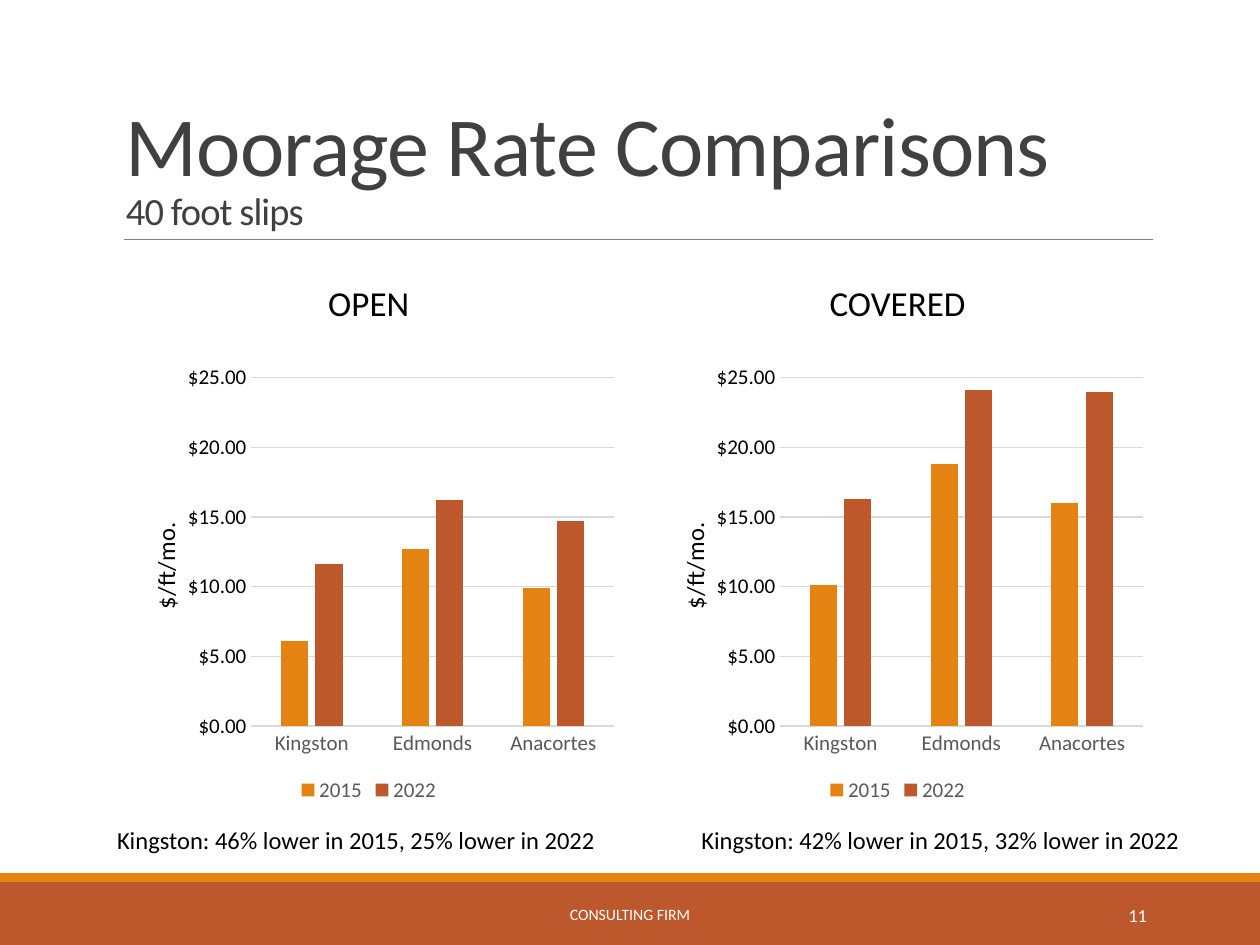
from dataclasses import dataclass

from lxml import etree
from pptx import Presentation
from pptx.chart.data import CategoryChartData
from pptx.dml.color import RGBColor
from pptx.enum import chart as ch, shapes, text
from pptx.oxml.ns import qn
from pptx.util import Cm, Pt


@dataclass(frozen=True)
class Theme:
    font: str = "Calibri"
    orange: str = "E48312"
    rust: str = "BD582C"
    title: str = "404040"
    label: str = "595959"
    rule: str = "808080"
    grid: str = "D9D9D9"
    black: str = "000000"
    white: str = "FFFFFF"
    title_size: float = 48
    subtitle_size: float = 22
    heading_size: float = 20
    note_size: float = 14
    axis_size: float = 12
    number_size: float = 10.5
    footer_size: float = 9


T = Theme()
CITIES = ["Kingston", "Edmonds", "Anacortes"]
PANELS = [
    # left, heading, rates by year, note, note left
    (2.29, "OPEN", {"2015": [6.1, 12.7, 9.9], "2022": [11.6, 16.2, 14.7]},
     "Kingston: 46% lower in 2015, 25% lower in 2022", 2.11),
    (12.95, "COVERED", {"2015": [10.1, 18.8, 16], "2022": [16.3, 24.1, 24]},
     "Kingston: 42% lower in 2015, 32% lower in 2022", 13.89),
]


def rgb(color):
    return RGBColor.from_string(color)


def style_font(font, size, color):
    font.name, font.size, font.bold = T.font, Pt(size), False
    font.color.rgb = rgb(color)


def add_text(s, box, lines, color=T.black, align=text.PP_ALIGN.LEFT,
             anchor=text.MSO_ANCHOR.MIDDLE, wrap=True, line_spacing=None, tracking=None):
    """Place (text, size) lines in one paragraph, parted by line breaks."""
    tf = s.shapes.add_textbox(*map(Cm, box)).text_frame
    tf.word_wrap, tf.vertical_anchor = wrap, anchor
    p = tf.paragraphs[0]
    p.alignment, p.line_spacing = align, line_spacing
    for i, (line, size) in enumerate(lines):
        if i:
            p.add_line_break()
        r = p.add_run()
        r.text = line
        style_font(r.font, size, color)
        if tracking is not None:
            r.font._element.set("spc", str(tracking))
    return p


def add_band(s, box, color):
    sp = s.shapes.add_shape(shapes.MSO_SHAPE.RECTANGLE, *map(Cm, box))
    sp.shadow.inherit = False
    sp.fill.solid()
    sp.fill.fore_color.rgb = rgb(color)
    sp.line.fill.background()


def set_layout(parent, index, **values):
    """Fix the place of a chart part, as fractions of the chart."""
    for old in parent.findall(qn("c:layout")):
        parent.remove(old)
    layout = etree.Element(qn("c:layout"))
    manual = etree.SubElement(layout, qn("c:manualLayout"))
    for tag, value in values.items():
        etree.SubElement(manual, qn(f"c:{tag}")).set("val", str(value))
    parent.insert(index, layout)


def style_axes(chart):
    cat, val = chart.category_axis, chart.value_axis
    for axis, color in ((cat, T.label), (val, T.black)):
        axis.major_tick_mark = axis.minor_tick_mark = ch.XL_TICK_MARK.NONE
        style_font(axis.tick_labels.font, T.axis_size, color)
    val.format.line.fill.background()
    val.minimum_scale, val.maximum_scale, val.major_unit = 0, 25, 5
    val.tick_labels.number_format = '"$"#,##0.00'
    val.tick_labels.number_format_is_linked = False
    for line in (cat.format.line, val.major_gridlines.format.line):
        line.color.rgb, line.width = rgb(T.grid), Pt(0.75)

    tf = val.axis_title.text_frame
    tf.text = "$/ft/mo."
    style_font(tf.paragraphs[0].runs[0].font, T.note_size, T.black)
    body = tf._txBody.find(qn("a:bodyPr"))
    body.set("rot", "-5400000")
    body.set("vert", "horz")
    set_layout(val.axis_title._element, 1, xMode="edge", yMode="edge", x=0.06, y=0.36)


def add_rate_chart(s, box, rates):
    data = CategoryChartData(number_format='"$"#,##0.00')
    data.categories = CITIES
    for year, values in rates.items():
        data.add_series(year, values)
    chart = s.shapes.add_chart(ch.XL_CHART_TYPE.COLUMN_CLUSTERED, *map(Cm, box), data).chart
    style_font(chart.font, 10, T.black)
    chart.has_title = False
    chart.has_legend = True
    chart.legend.position = ch.XL_LEGEND_POSITION.BOTTOM
    chart.legend.include_in_layout = False
    style_font(chart.legend.font, T.axis_size, T.label)
    plot = chart.plots[0]
    plot.gap_width, plot.overlap, plot.vary_by_categories = 219, -27, False
    for series, color in zip(plot.series, (T.orange, T.rust)):
        series.format.fill.solid()
        series.format.fill.fore_color.rgb = rgb(color)
    style_axes(chart)
    set_layout(chart._chartSpace.find(f".//{qn('c:plotArea')}"), 0, layoutTarget="inner",
               xMode="edge", yMode="edge", x=0.27, y=0.05, w=0.71, h=0.77)


def add_header(s, left, top, width, height):
    add_text(s, (left, top, width, height),
             [("Moorage Rate Comparisons", T.title_size), ("40 foot slips", T.subtitle_size)],
             color=T.title, anchor=text.MSO_ANCHOR.BOTTOM, line_spacing=0.85, tracking=-50)
    y = Cm(top + height)
    rule = s.shapes.add_connector(shapes.MSO_CONNECTOR.STRAIGHT,
                                  Cm(left + 0.2), y, Cm(left + width), y)
    rule.line.color.rgb, rule.line.width = rgb(T.rule), Pt(0.5)
    etree.SubElement(rule._element.spPr, qn("a:effectLst"))


def add_panel(s, left, top, width, heading, rates, note, note_left):
    p = add_text(s, (left, top, width, 2.05), [(heading, T.heading_size)],
                 align=text.PP_ALIGN.CENTER, line_spacing=0.9)
    p.space_before, p.space_after = Pt(12), Pt(2)
    add_rate_chart(s, (left, top + 2.03, width, 9.12), rates)
    add_text(s, (note_left, top + 11.38, width, 0.86), [(note, T.note_size)],
             anchor=text.MSO_ANCHOR.TOP, wrap=False)


def add_footer(s, top, width, height):
    add_band(s, (0, top, width, height), T.rust)
    add_band(s, (0, top - 0.18, width, 0.18), T.orange)
    add_text(s, (7.67, top + 0.15, 10.06, 1.02), [("CONSULTING FIRM", T.footer_size)],
             color=T.white, align=text.PP_ALIGN.CENTER)
    add_text(s, (20.62, top + 0.15, 2.75, 1.02), [("11", T.number_size)],
             color=T.white, align=text.PP_ALIGN.RIGHT)


def main():
    prs = Presentation()
    prs.slide_width, prs.slide_height = Cm(25.4), Cm(19.05)
    s = prs.slides.add_slide(prs.slide_layouts[6])
    add_footer(s, 17.78, 25.4, 1.27)
    add_header(s, 2.29, 0.79, 20.96, 4.04)
    for left, *content in PANELS:
        add_panel(s, left, 5.13, 10.29, *content)
    prs.save("out.pptx")


if __name__ == "__main__":
    main()
